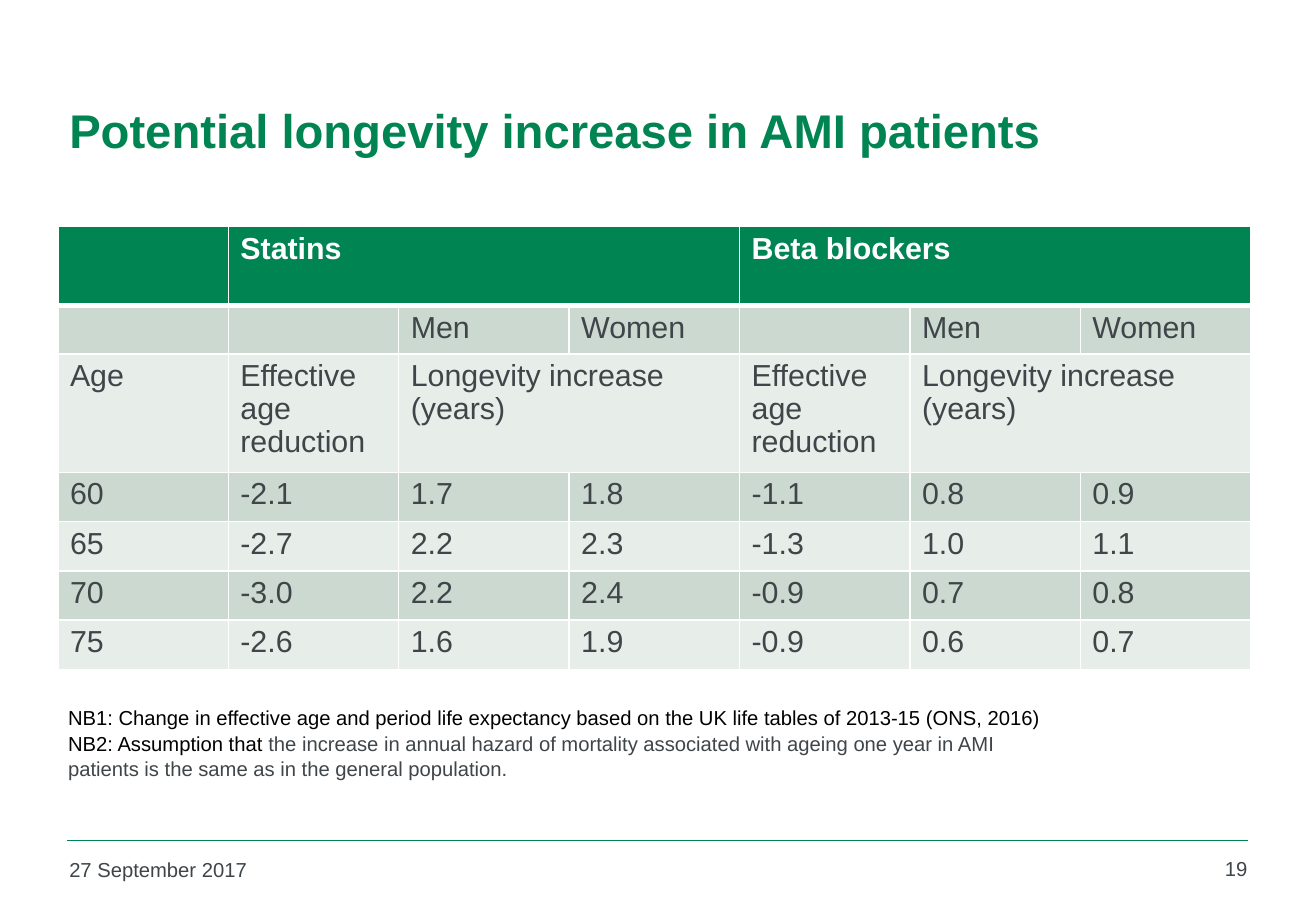
import pptx
import pptx.util
import pptx.dml.color
import pptx.enum.shapes
import pptx.enum.text
import pptx.oxml
import pptx.oxml.ns
import lxml.etree

Pt = pptx.util.Pt
Color = pptx.dml.color.RGBColor
Align = pptx.enum.text.PP_ALIGN
Anchor = pptx.enum.text.MSO_ANCHOR

GREEN = Color(0x00, 0x84, 0x52)
SAGE = Color(0xCC, 0xD9, 0xD1)
PALE = Color(0xE7, 0xED, 0xE9)
GREY = Color(0x3F, 0x45, 0x48)
BLACK = Color(0, 0, 0)
WHITE = Color(0xFF, 0xFF, 0xFF)

TITLE = "Potential longevity increase in AMI patients"
EFFECT = ["Effective age reduction", "Longevity increase (years)", None]
ROWS = [
    ["", "Statins", None, None, "Beta blockers", None, None],
    ["", "", "Men", "Women", "", "Men", "Women"],
    ["Age"] + EFFECT * 2,
    ["60", "-2.1", "1.7", "1.8", "-1.1", "0.8", "0.9"],
    ["65", "-2.7", "2.2", "2.3", "-1.3", "1.0", "1.1"],
    ["70", "-3.0", "2.2", "2.4", "-0.9", "0.7", "0.8"],
    ["75", "-2.6", "1.6", "1.9", "-0.9", "0.6", "0.7"],
]
HEIGHTS = [46.8, 27.3, 67.5] + [29.2] * 4
NOTES = [
    [("NB1: Change in effective age and period life expectancy based on the "
      "UK life tables of 2013-15 (ONS, 2016)", BLACK)],
    [("NB2: Assumption that ", BLACK),
     ("the increase in annual hazard of mortality associated with ageing one "
      "year in AMI patients is the same as in the general population.", GREY)],
]
LEFT, TOP, COL = 34.3, 134.3, 101


def add_run(para, text, size, color, bold=False):
    run = para.add_run()
    run.text = text
    font = run.font
    font.name, font.size, font.bold = "Arial", Pt(size), bold
    font.color.rgb = color


def add_text(slide, box, paras, size, bold=False, align=Align.LEFT,
             anchor=Anchor.TOP, space=None):
    frame = slide.shapes.add_textbox(*map(Pt, box)).text_frame
    frame.word_wrap = True
    frame.vertical_anchor = anchor
    for i, runs in enumerate(paras):
        para = frame.add_paragraph() if i else frame.paragraphs[0]
        para.alignment = align
        para.line_spacing = space
        for text, color in runs:
            add_run(para, text, size, color, bold)


def add_edges(cell, row):
    props = cell._tc.get_or_add_tcPr()
    widths = {"L": 1, "R": 1, "T": 3 if row == 1 else 1, "B": 1 if row else 3}
    for i, (side, width) in enumerate(widths.items()):
        props.insert(i, pptx.oxml.parse_xml(
            f'<a:ln{side} {pptx.oxml.ns.nsdecls("a")} w="{Pt(width)}">'
            f'<a:solidFill><a:srgbClr val="{WHITE}"/></a:solidFill></a:ln{side}>'))


def add_grid(slide):
    count = len(ROWS[0])
    table = slide.shapes.add_table(
        len(ROWS), count, Pt(LEFT), Pt(TOP),
        Pt(COL * count), Pt(sum(HEIGHTS))).table
    for col in table.columns:
        col.width = Pt(COL)
    for r, texts in enumerate(ROWS):
        table.rows[r].height = Pt(HEIGHTS[r])
        for c, text in enumerate(texts):
            cell = table.cell(r, c)
            cell.fill.solid()
            cell.fill.fore_color.rgb = (SAGE if r % 2 else PALE) if r else GREEN
            add_edges(cell, r)
            para = cell.text_frame.paragraphs[0]
            para.line_spacing = 0.97
            if text:
                add_run(para, text, 18, GREY if r else WHITE, r == 0)
            end = c
            while end + 1 < count and texts[end + 1] is None:
                end += 1
            if text is not None and end > c:
                cell.merge(table.cell(r, end))


def add_rule(slide):
    rule = slide.shapes.add_connector(
        pptx.enum.shapes.MSO_CONNECTOR.STRAIGHT,
        Pt(39.6), Pt(498.2), Pt(740), Pt(498.2))
    rule.line.color.rgb = GREEN
    rule.line.width = Pt(1)
    lxml.etree.SubElement(rule._element.spPr, pptx.oxml.ns.qn("a:effectLst"))


def main():
    deck = pptx.Presentation()
    deck.slide_width, deck.slide_height = Pt(780), Pt(540)
    slide = deck.slides.add_slide(deck.slide_layouts[6])
    add_rule(slide)
    add_text(slide, (34, 32, 707, 90), [[(TITLE, GREEN)]], 28, True,
             anchor=Anchor.MIDDLE)
    add_grid(slide)
    add_text(slide, (34, 504.7, 172, 26), [[("27 September 2017", GREY)]], 12)
    add_text(slide, (691, 504, 55.5, 26.6), [[("19", GREY)]], 12,
             align=Align.RIGHT)
    add_text(slide, (33.3, 414, 600.5, 51), NOTES, 12, space=1.05)
    deck.save("out.pptx")


if __name__ == "__main__":
    main()
